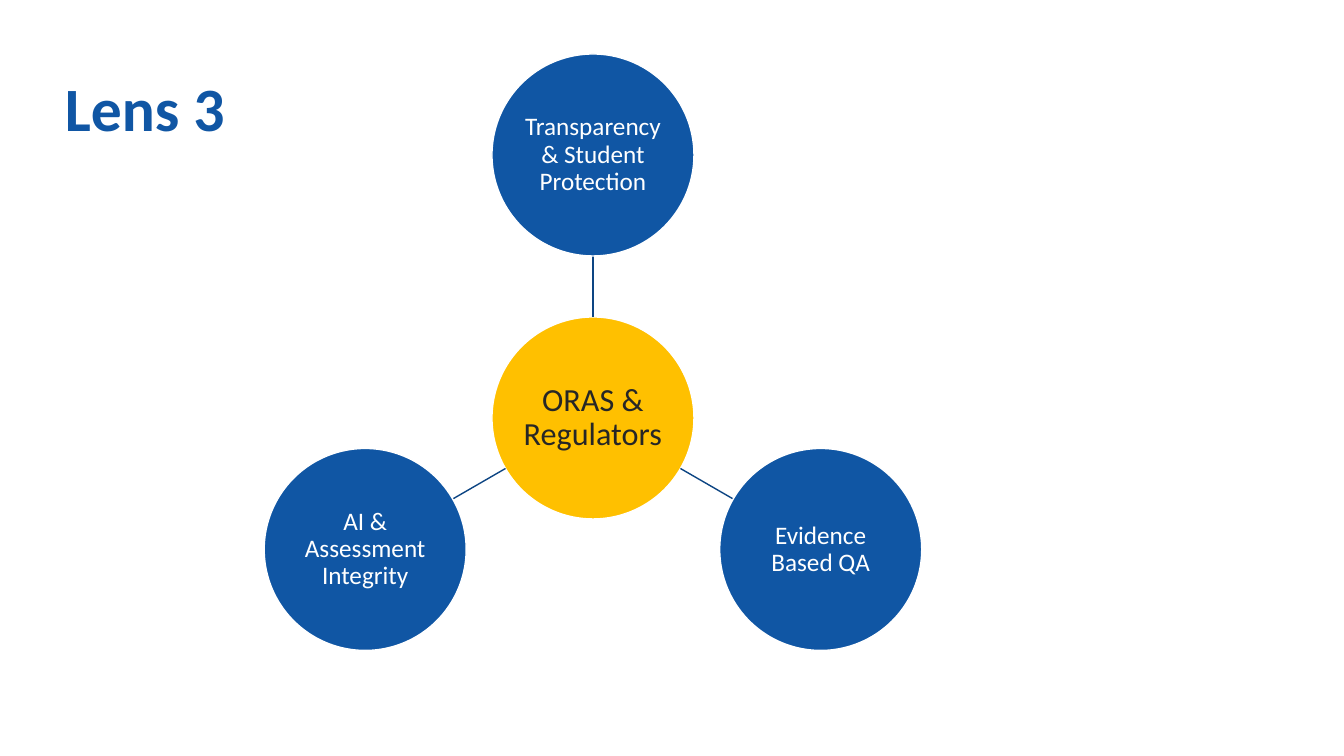
"""Builds the Lens 3 slide: a hub circle with three linked circles around it."""
from math import cos, radians, sin

from lxml import etree
from pptx import Presentation
from pptx.dml.color import RGBColor
from pptx.enum.shapes import MSO_CONNECTOR, MSO_SHAPE
from pptx.enum.text import MSO_ANCHOR, PP_ALIGN
from pptx.oxml.ns import qn
from pptx.util import Emu, Pt

TITLE = "Lens 3"
HUB = "ORAS & Regulators"
NODES = [
    ("Transparency & Student Protection", -90),
    ("Evidence Based QA", 30),
    ("AI & Assessment Integrity", 150),
]

BLUE = RGBColor(0x10, 0x56, 0xA4)
NAVY = RGBColor(0x0D, 0x45, 0x83)
GOLD = RGBColor(0xFF, 0xC0, 0x00)
DARK = RGBColor(0x26, 0x26, 0x26)
WHITE = RGBColor(0xFF, 0xFF, 0xFF)

OVAL = MSO_SHAPE.OVAL
LINE = MSO_CONNECTOR.STRAIGHT
MIDDLE = MSO_ANCHOR.MIDDLE
LEFT, CENTER = PP_ALIGN.LEFT, PP_ALIGN.CENTER

FONT = "Calibri"
MID_X, MID_Y = 593, 418
SIZE = 202
ORBIT = 263


def px(n):
    return Emu(round(n * 914400 / 100.8))


def write(shape, text, size, color, align, bold=False):
    frame = shape.text_frame
    frame.text = text
    frame.word_wrap = True
    frame.vertical_anchor = MIDDLE
    para = frame.paragraphs[0]
    para.alignment = align
    para.line_spacing = 0.9
    font = para.runs[0].font
    font.name, font.size, font.bold = FONT, Pt(size), bold
    font.color.rgb = color


def polar(angle, dist):
    turn = radians(angle)
    return MID_X + dist * cos(turn), MID_Y + dist * sin(turn)


def circle(slide, center, text, size, fill, color):
    x, y = center
    disc = slide.shapes.add_shape(
        OVAL, px(x - SIZE / 2), px(y - SIZE / 2), px(SIZE), px(SIZE))
    disc.shadow.inherit = False
    disc.fill.solid()
    disc.fill.fore_color.rgb = fill
    disc.line.color.rgb = WHITE
    disc.line.width = Pt(1)
    frame = disc.text_frame
    frame.margin_left = frame.margin_right = px(1)
    frame.margin_top = frame.margin_bottom = px(1)
    write(disc, text, size, color, CENTER)


def spoke(slide, angle):
    ends = polar(angle, SIZE / 2) + polar(angle, ORBIT - SIZE / 2)
    link = slide.shapes.add_connector(LINE, *map(px, ends))
    link.line.color.rgb = NAVY
    link.line.width = Pt(1)
    etree.SubElement(link._element.spPr, qn("a:effectLst"))


def main():
    deck = Presentation()
    deck.slide_width, deck.slide_height = px(1344), px(756)
    slide = deck.slides.add_slide(deck.slide_layouts[6])

    title = slide.shapes.add_textbox(px(55), px(38), px(1026), px(148))
    write(title, TITLE, 44, BLUE, LEFT, bold=True)

    circle(slide, (MID_X, MID_Y), HUB, 23, GOLD, DARK)
    for text, angle in NODES:
        spoke(slide, angle)
        circle(slide, polar(angle, ORBIT), text, 18, BLUE, WHITE)

    deck.save("out.pptx")


if __name__ == "__main__":
    main()
